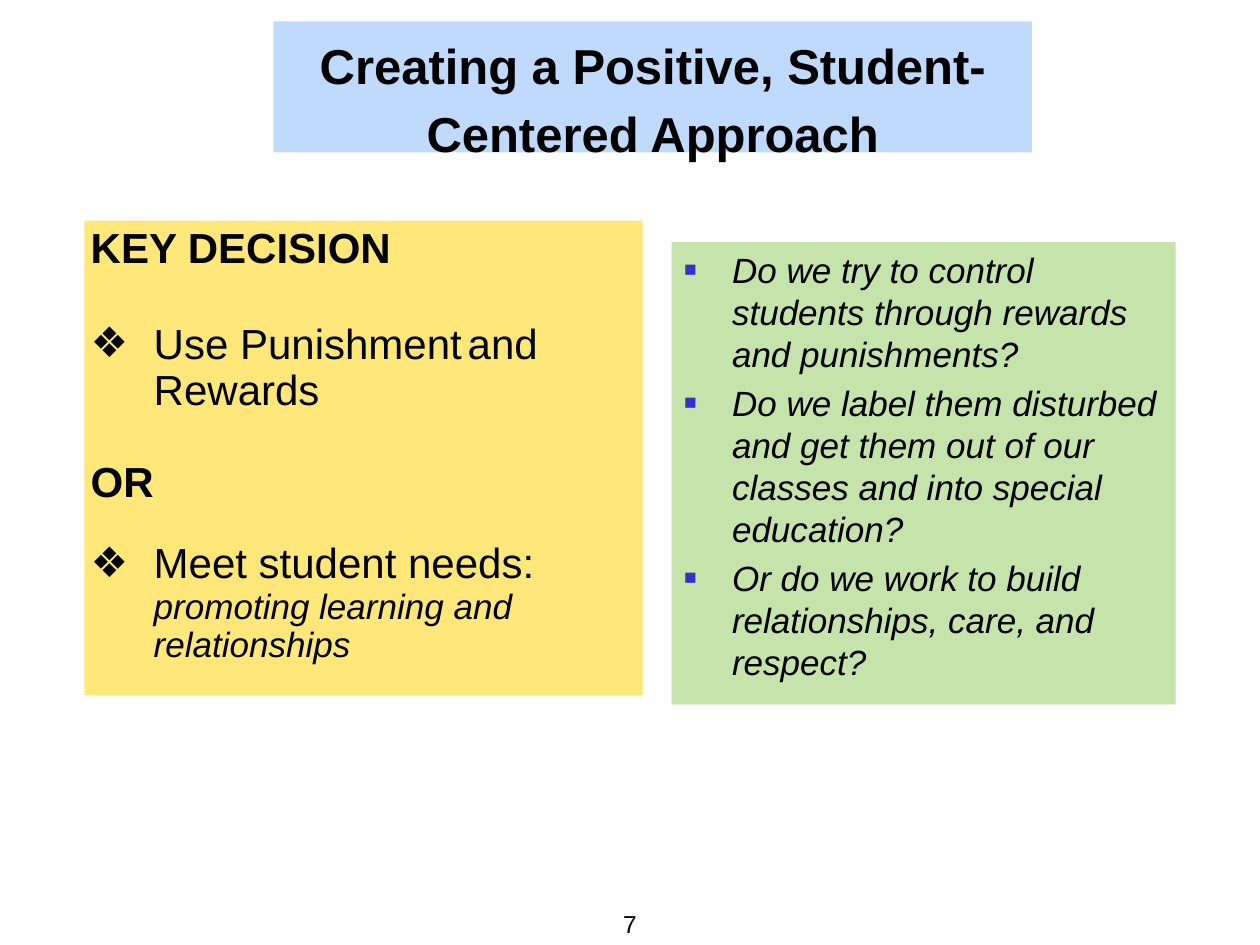
from dataclasses import dataclass

from lxml import etree
from pptx import Presentation
from pptx import util as u
from pptx.dml.color import RGBColor
from pptx.enum import text
from pptx.oxml.ns import qn


@dataclass(frozen=True)
class Theme:
    font: str = "Arial"
    ink: str = "000000"
    title_fill: str = "BFDAFD"
    decision_fill: str = "FFE879"
    question_fill: str = "C5E4AB"
    marker: str = "3333CC"
    title: int = 28
    body: int = 24
    detail: int = 20
    number: int = 14
    small_gap: int = 12


def set_bullet(p, indent=0, char=None, color=None, size=None):
    """Set a hanging indent in inches and a bullet, or no bullet without char."""
    pPr = p._p.get_or_add_pPr()
    pPr.set("marL", str(u.Inches(indent)))
    pPr.set("indent", str(-u.Inches(indent)))
    if char is None:
        etree.SubElement(pPr, qn("a:buNone"))
        return
    if color:
        clr = etree.SubElement(pPr, qn("a:buClr"))
        etree.SubElement(clr, qn("a:srgbClr"), val=color)
    if size:
        etree.SubElement(pPr, qn("a:buSzPct"), val=str(size * 1000))
    etree.SubElement(pPr, qn("a:buFont"), typeface="Arial")
    etree.SubElement(pPr, qn("a:buChar"), char=char)


class Builder:
    def __init__(self, slide, theme):
        self.s, self.t = slide, theme

    def frame(self, sp, box, fill=None, inset=0.05, wrap=True, anchor=text.MSO_ANCHOR.TOP):
        sp.left, sp.top, sp.width, sp.height = (u.Inches(v) for v in box)
        if fill:
            sp.fill.solid()
            sp.fill.fore_color.rgb = RGBColor.from_string(fill)
        tf = sp.text_frame
        tf.auto_size = text.MSO_AUTO_SIZE.NONE
        tf.word_wrap, tf.vertical_anchor = wrap, anchor
        tf.margin_left = tf.margin_right = u.Inches(inset)
        tf.margin_top = tf.margin_bottom = u.Inches(0.05)
        return tf

    def run(self, p, words, size, bold=False, italic=False):
        r = p.add_run()
        r.text = words
        f = r.font
        f.name, f.size, f.bold, f.italic = self.t.font, u.Pt(size), bold, italic
        f.color.rgb = RGBColor.from_string(self.t.ink)

    def paragraph(self, tf, runs, first=False, before=0, spacing=1.0, align=None, **bullet):
        """Add a paragraph; runs holds (words, format keywords) pairs."""
        p = tf.paragraphs[0] if first else tf.add_paragraph()
        set_bullet(p, **bullet)
        p.alignment, p.line_spacing = align, spacing
        p.space_before = u.Pt(0 if first else before)
        p.space_after = u.Pt(0)
        for words, style in runs:
            self.run(p, words, **style)

    def title(self, words, box):
        tf = self.frame(self.s.shapes.title, box, self.t.title_fill)
        self.paragraph(tf, [(words, dict(size=self.t.title, bold=True))], first=True,
                       spacing=1.14, align=text.PP_ALIGN.CENTER)

    def body(self, idx, box, fill, paragraphs, inset=0.05, **common):
        tf = self.frame(self.s.placeholders[idx], box, fill, inset)
        for i, (runs, options) in enumerate(paragraphs):
            self.paragraph(tf, runs, first=i == 0, **{**common, **options})

    def number(self, words, box):
        sp = self.s.shapes.add_textbox(0, 0, 0, 0)
        tf = self.frame(sp, box, wrap=False, anchor=text.MSO_ANCHOR.BOTTOM)
        self.paragraph(tf, [(words, dict(size=self.t.number))], first=True,
                       align=text.PP_ALIGN.CENTER)


def main():
    prs = Presentation()
    prs.slide_width, prs.slide_height = u.Inches(10), u.Inches(7.5)
    t = Theme()
    b = Builder(prs.slides.add_slide(prs.slide_layouts[3]), t)
    b.title("Creating a Positive, Student-Centered Approach", (2.17, 0.17, 6.02, 1.04))

    plain = dict(size=t.body)
    heading = dict(size=t.body, bold=True)
    detail = dict(size=t.detail, italic=True)
    b.body(1, (0.67, 1.75, 4.43, 3.77), t.decision_fill, [
        ([("KEY DECISION", heading)], {}),
        ([("Use Punishment", plain), (" ", dict(size=t.small_gap)), ("and Rewards", plain)],
         dict(char="❖", before=28)),
        ([("OR", heading)], dict(before=26)),
        ([("Meet student needs: ", plain), ("promoting learning and relationships", detail)],
         dict(char="❖", before=20)),
    ], indent=0.5, spacing=0.92)

    questions = [
        "Do we try to control students through rewards and punishments?",
        "Do we label them disturbed and get them out of our classes and into special education?",
        "Or do we work to build relationships, care, and respect?",
    ]
    b.body(2, (5.33, 1.92, 4, 3.67), t.question_fill,
           [([(q, detail)], {}) for q in questions],
           inset=0.1, indent=0.38, before=4, char="■", color=t.marker, size=60)
    b.number("7", (4.89, 7.16, 0.22, 0.34))
    prs.save("out.pptx")


if __name__ == "__main__":
    main()
